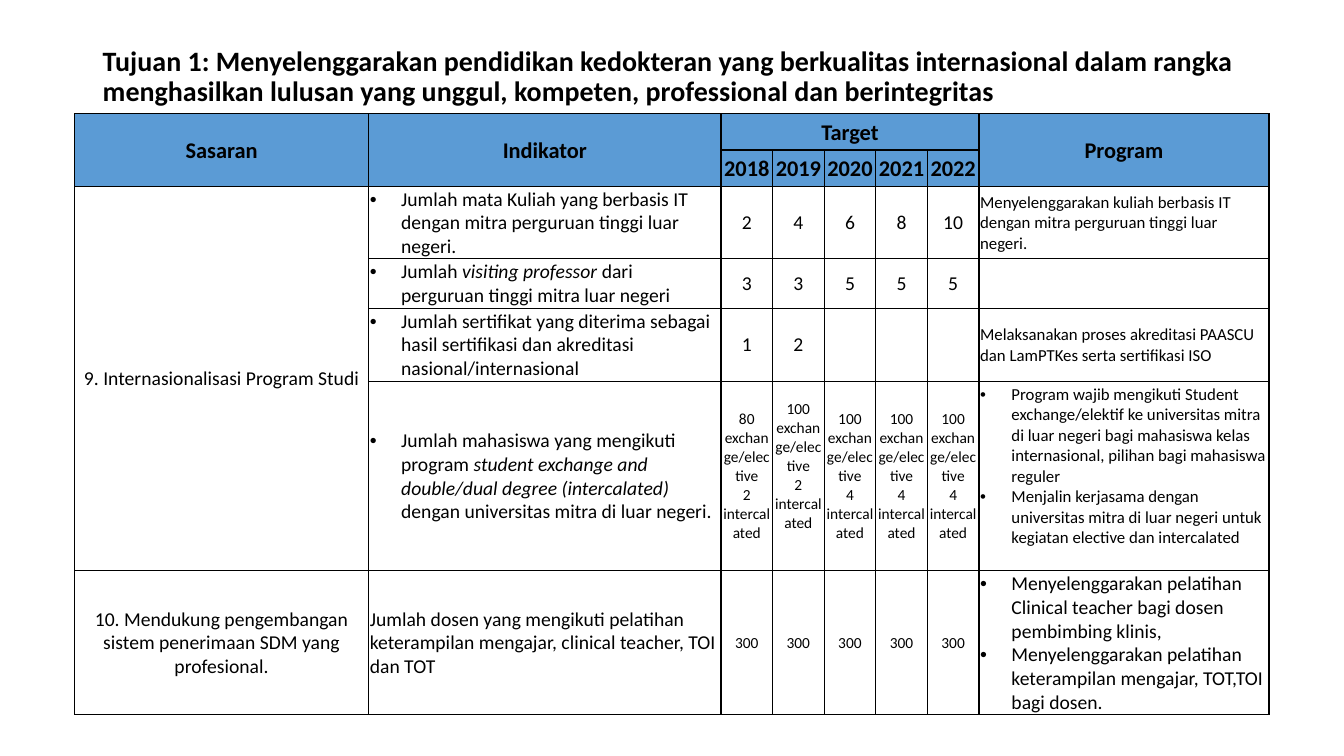
from lxml import etree
from pptx import Presentation
from pptx.dml.color import RGBColor
from pptx.enum.text import MSO_ANCHOR, PP_ALIGN
from pptx.oxml.ns import qn
from pptx.util import Cm, Pt

MIDDLE = MSO_ANCHOR.MIDDLE
LEFT, CENTER = PP_ALIGN.LEFT, PP_ALIGN.CENTER

THEME = {
    "font": "Calibri", "ink": "000000", "head": "5B9BD5",
    "title": 20, "line": 1,
    # style: size, bold, alignment, bullet
    "styles": {
        "head": (16, True, CENTER, False),
        "mid": (14, False, CENTER, False),
        "text": (14, False, LEFT, False),
        "list": (14, False, LEFT, True),
        "note": (12, False, LEFT, False),
        "points": (12, False, LEFT, True),
        "small": (11, False, CENTER, False),
    },
}

TITLE = ("Tujuan 1: Menyelenggarakan pendidikan kedokteran yang berkualitas "
         "internasional dalam rangka menghasilkan lulusan yang unggul, kompeten, "
         "professional dan berintegritas")

# Each part: style, then paragraphs. A paragraph is a string, or a tuple
# of runs in which every second run is italic.
HEADS = [("Sasaran", 0), ("Indikator", 1), ("Target", 2), ("Program", 7)]
YEARS = ["2018", "2019", "2020", "2021", "2022"]
GOALS = {2: "9. Internasionalisasi Program Studi",
         6: "10. Mendukung pengembangan sistem penerimaan SDM yang profesional."}
SIGNS = [
    ("list", ["Jumlah mata Kuliah yang berbasis IT dengan mitra perguruan "
              "tinggi luar negeri."]),
    ("list", [("Jumlah ", "visiting professor ",
               "dari perguruan tinggi mitra luar negeri")]),
    ("list", ["Jumlah sertifikat yang diterima sebagai hasil sertifikasi dan "
              "akreditasi nasional/internasional"]),
    ("list", [("Jumlah mahasiswa yang mengikuti program ",
               "student exchange and double/dual degree (intercalated) ",
               "dengan universitas mitra di luar negeri.")]),
    ("text", ["Jumlah dosen yang mengikuti pelatihan keterampilan mengajar, "
              "clinical teacher, TOI dan TOT"]),
]
SWAPS = [(80, 2), (100, 2), (100, 4), (100, 4), (100, 4)]
TARGETS = [
    ("mid", [["2"], ["4"], ["6"], ["8"], ["10"]]),
    ("mid", [["3"], ["3"], ["5"], ["5"], ["5"]]),
    ("mid", [["1"], ["2"], [], [], []]),
    ("small", [[f"{out} exchange/elective", f"{dual} intercalated"]
               for out, dual in SWAPS]),
    ("small", [["300"]] * 5),
]
PLANS = [
    ("note", ["Menyelenggarakan kuliah berbasis IT dengan mitra perguruan "
              "tinggi luar negeri."]),
    ("note", []),
    ("note", ["Melaksanakan proses akreditasi PAASCU dan LamPTKes serta "
              "sertifikasi ISO"]),
    ("points", ["Program wajib mengikuti Student exchange/elektif ke universitas "
                "mitra di luar negeri bagi mahasiswa kelas internasional, pilihan "
                "bagi mahasiswa reguler",
                "Menjalin kerjasama dengan universitas mitra di luar negeri untuk "
                "kegiatan elective dan intercalated"]),
    ("list", ["Menyelenggarakan pelatihan Clinical teacher bagi dosen pembimbing "
              "klinis,",
              "Menyelenggarakan pelatihan keterampilan mengajar, TOT,TOI bagi "
              "dosen."]),
]
WIDTHS = [7.41, 8.88] + [1.3] * 5 + [7.31]
HEIGHTS = [0.91, 0.91, 1.82, 1.24, 1.84, 4.77, 3.64]
MERGES = [(0, 0, 1, 0), (0, 1, 1, 1), (0, 2, 0, 6), (0, 7, 1, 7), (2, 0, 5, 0)]
RAISED = [(5, 3), (5, 7)]  # cells whose text sits above the middle


def add_run(para, text, size, bold, slant=False):
    run = para.add_run()
    run.text = text
    font = run.font
    font.name, font.size = THEME["font"], Pt(size)
    font.bold, font.italic = bold, slant
    font.color.rgb = RGBColor.from_string(THEME["ink"])


def add_bullet(para):
    props = para._p.get_or_add_pPr()
    props.set("marL", str(Cm(0.79)))
    props.set("indent", str(Cm(-0.79)))
    etree.SubElement(props, qn("a:buFont")).set("typeface", "Arial")
    etree.SubElement(props, qn("a:buChar")).set("char", "•")


def add_edges(cell):
    props = cell._tc.get_or_add_tcPr()
    for side in ("lnL", "lnR", "lnT", "lnB"):
        line = etree.SubElement(props, qn(f"a:{side}"), w=str(Pt(THEME["line"])))
        fill = etree.SubElement(line, qn("a:solidFill"))
        etree.SubElement(fill, qn("a:srgbClr")).set("val", THEME["ink"])


def write(cell, style, paras):
    size, bold, align, bullet = THEME["styles"][style]
    frame = cell.text_frame
    for i, runs in enumerate(paras):
        para = frame.add_paragraph() if i else frame.paragraphs[0]
        para.alignment = align
        if bullet:
            add_bullet(para)
        for j, text in enumerate([runs] if isinstance(runs, str) else runs):
            add_run(para, text, size, bold, j % 2 == 1)


def add_title(slide):
    box = slide.shapes.add_textbox(Cm(2.34), Cm(1.02), Cm(29.2), Cm(1.85))
    frame = box.text_frame
    frame.word_wrap = True
    frame.vertical_anchor = MIDDLE
    para = frame.paragraphs[0]
    para.line_spacing = 0.9
    add_run(para, TITLE, THEME["title"], True)


def add_grid(slide):
    grid = slide.shapes.add_table(
        len(HEIGHTS), len(WIDTHS), Cm(1.88), Cm(2.87),
        Cm(sum(WIDTHS)), Cm(sum(HEIGHTS))).table
    for col, width in zip(grid.columns, WIDTHS):
        col.width = Cm(width)
    for row, height in zip(grid.rows, HEIGHTS):
        row.height = Cm(height)

    for r in range(len(HEIGHTS)):
        for c in range(len(WIDTHS)):
            cell = grid.cell(r, c)
            add_edges(cell)
            if r < 2:
                cell.fill.solid()
                cell.fill.fore_color.rgb = RGBColor.from_string(THEME["head"])
            else:
                cell.fill.background()
            cell.vertical_anchor = MIDDLE
            cell.margin_left = cell.margin_right = cell.margin_top = Cm(0.03)
            cell.margin_bottom = Cm(0.5 if (r, c) in RAISED else 0)
    for top, left, low, right in MERGES:
        grid.cell(top, left).merge(grid.cell(low, right))

    for text, c in HEADS:
        write(grid.cell(0, c), "head", [text])
    for c, year in enumerate(YEARS, 2):
        write(grid.cell(1, c), "head", [year])
    for r, goal in GOALS.items():
        write(grid.cell(r, 0), "mid", [goal])
    for r, (sign, (style, values), plan) in enumerate(zip(SIGNS, TARGETS, PLANS), 2):
        write(grid.cell(r, 1), *sign)
        for c, value in enumerate(values, 2):
            write(grid.cell(r, c), style, value)
        write(grid.cell(r, 7), *plan)


def main():
    deck = Presentation()
    deck.slide_width, deck.slide_height = Cm(33.87), Cm(19.05)
    slide = deck.slides.add_slide(deck.slide_layouts[6])
    add_grid(slide)
    add_title(slide)
    deck.save("out.pptx")


if __name__ == "__main__":
    main()
